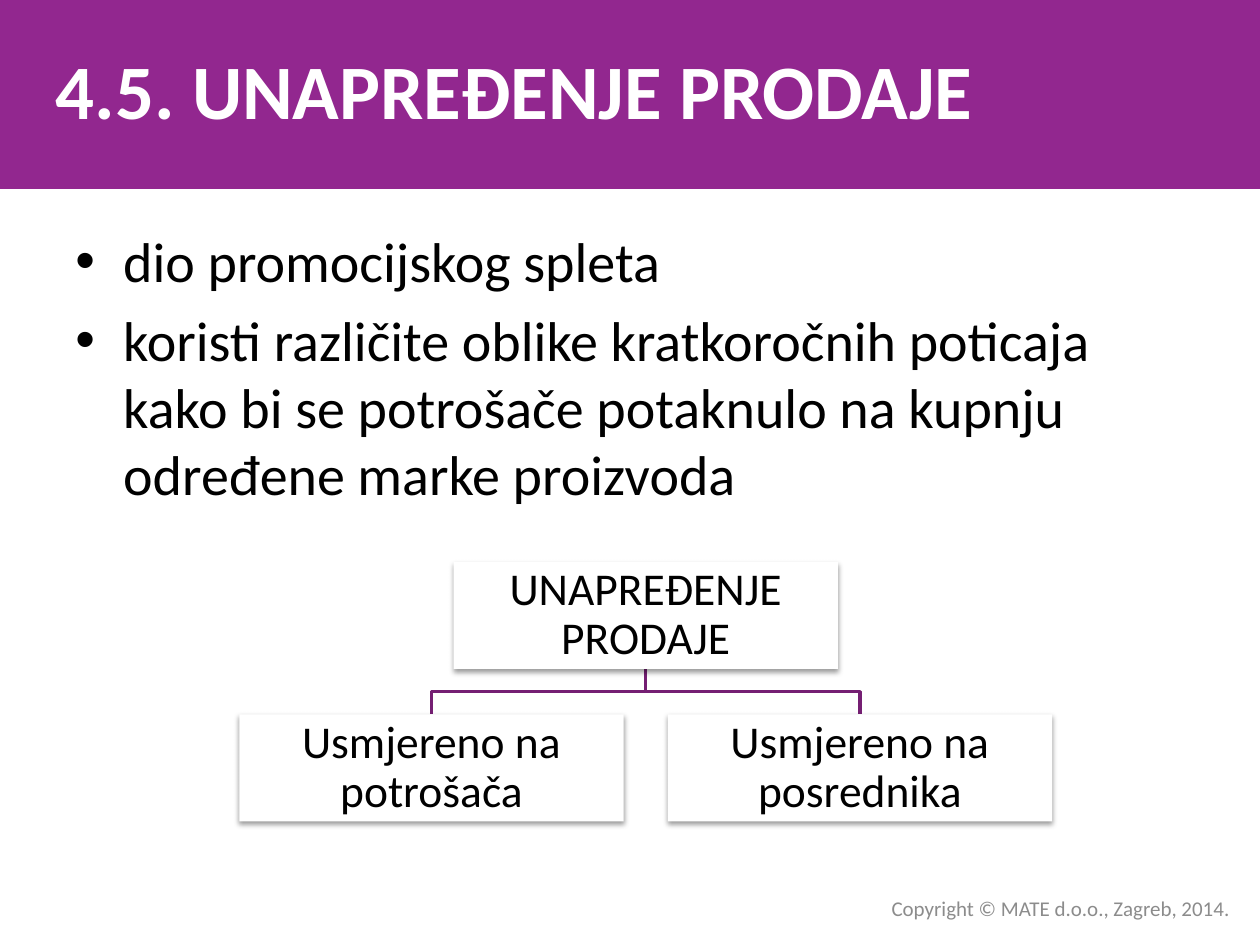
from lxml import etree
from pptx import Presentation
from pptx.dml.color import RGBColor
from pptx.enum import shapes, text
from pptx.oxml import parse_xml
from pptx.oxml.ns import nsdecls, qn
from pptx.util import Inches, Pt

PURPLE = RGBColor(0x92, 0x27, 0x8F)
DARK_PURPLE = RGBColor(0x75, 0x1F, 0x73)
WHITE = RGBColor(0xFF, 0xFF, 0xFF)
BLACK = RGBColor(0, 0, 0)
GREY = RGBColor(0x8C, 0x8C, 0x8C)
MIDDLE = text.MSO_ANCHOR.MIDDLE
CENTER, RIGHT = text.PP_ALIGN.CENTER, text.PP_ALIGN.RIGHT

SHADOW = f"""<a:effectLst {nsdecls('a')}>
  <a:outerShdw blurRad="{Pt(3.1)}" dist="{Pt(1.6)}" dir="5400000" rotWithShape="0">
    <a:srgbClr val="000000"><a:alpha val="38000"/></a:srgbClr>
  </a:outerShdw>
</a:effectLst>"""

prs = Presentation()
prs.slide_width, prs.slide_height = Inches(10), Inches(7.5)
slide = prs.slides.add_slide(prs.slide_layouts[6])


def write(paragraph, words, size, color, bold=False, align=None):
    paragraph.alignment = align
    run = paragraph.add_run()
    run.text = words
    run.font.color.rgb = color
    for key, value in {"name": "Calibri", "size": Pt(size), "bold": bold}.items():
        setattr(run.font, key, value)


def add_frame(left, top, width, height, anchor):
    box = slide.shapes.add_textbox(*map(Inches, (left, top, width, height)))
    box.text_frame.word_wrap = True
    box.text_frame.vertical_anchor = anchor
    return box.text_frame


# Title band
band = slide.shapes.add_shape(shapes.MSO_SHAPE.RECTANGLE, 0, 0, prs.slide_width, Inches(1.5))
band.shadow.inherit = False
band.fill.solid()
band.fill.fore_color.rgb = PURPLE
band.line.fill.background()
title = add_frame(0, 0.08, 8.17, 1.25, MIDDLE)
write(title.paragraphs[0], "4.5. UNAPREĐENJE PRODAJE", 44, WHITE, True, CENTER)

# Bullets
points = [
    "dio promocijskog spleta",
    "koristi različite oblike kratkoročnih poticaja kako bi se potrošače "
    "potaknulo na kupnju određene marke proizvoda",
]
body = add_frame(0.5, 1.75, 9, 4.95, text.MSO_ANCHOR.TOP)
for i, point in enumerate(points):
    paragraph = body.paragraphs[0] if i == 0 else body.add_paragraph()
    if i:
        paragraph.space_before = Pt(6.4)
    props = paragraph._p.get_or_add_pPr()
    props.set("marL", str(Inches(0.38)))
    props.set("indent", str(-Inches(0.38)))
    etree.SubElement(props, qn("a:buFont")).set("typeface", "Arial")
    etree.SubElement(props, qn("a:buChar")).set("char", "•")
    write(paragraph, point, 32, BLACK)

# Hierarchy: a root centred above two branches
box_width, box_height, gap = 3.05, 0.85, 0.35
root_top, branch_top = 4.46, 5.67
root_left = 3.6
step = (box_width + gap) / 2
root_center = root_left + box_width / 2
root_bottom = root_top + box_height
bend = (root_bottom + branch_top) / 2

# Branch lines
for side in (1, -1):
    branch_center = root_center + side * step
    builder = slide.shapes.build_freeform(Inches(root_center), Inches(root_bottom))
    builder.add_line_segments(
        [(Inches(x), Inches(y)) for x, y in
         ((root_center, bend), (branch_center, bend), (branch_center, branch_top))],
        close=False)
    branch_line = builder.convert_to_shape()
    branch_line.shadow.inherit = False
    branch_line.fill.background()
    branch_line.line.color.rgb = DARK_PURPLE
    branch_line.line.width = Pt(2)

# Boxes
for words, left, top in (
    ("UNAPREĐENJE PRODAJE", root_left, root_top),
    ("Usmjereno na potrošača", root_left - step, branch_top),
    ("Usmjereno na posrednika", root_left + step, branch_top),
):
    node = slide.shapes.add_shape(shapes.MSO_SHAPE.RECTANGLE,
                                  *map(Inches, (left, top, box_width, box_height)))
    node.fill.solid()
    node.fill.fore_color.rgb = WHITE
    node.line.fill.background()
    node._element.spPr.append(parse_xml(SHADOW))
    frame = node.text_frame
    frame.word_wrap = True
    frame.vertical_anchor = MIDDLE
    for margin in ("margin_left", "margin_top", "margin_right", "margin_bottom"):
        setattr(frame, margin, Inches(0.02))
    frame.paragraphs[0].line_spacing = 0.9
    write(frame.paragraphs[0], words, 26, BLACK, align=CENTER)

# Copyright line
footer = add_frame(4.69, 7.06, 5.17, 0.3, MIDDLE)
write(footer.paragraphs[0], "Copyright © MATE d.o.o., Zagreb, 2014.", 12, GREY, align=RIGHT)

prs.save("out.pptx")
